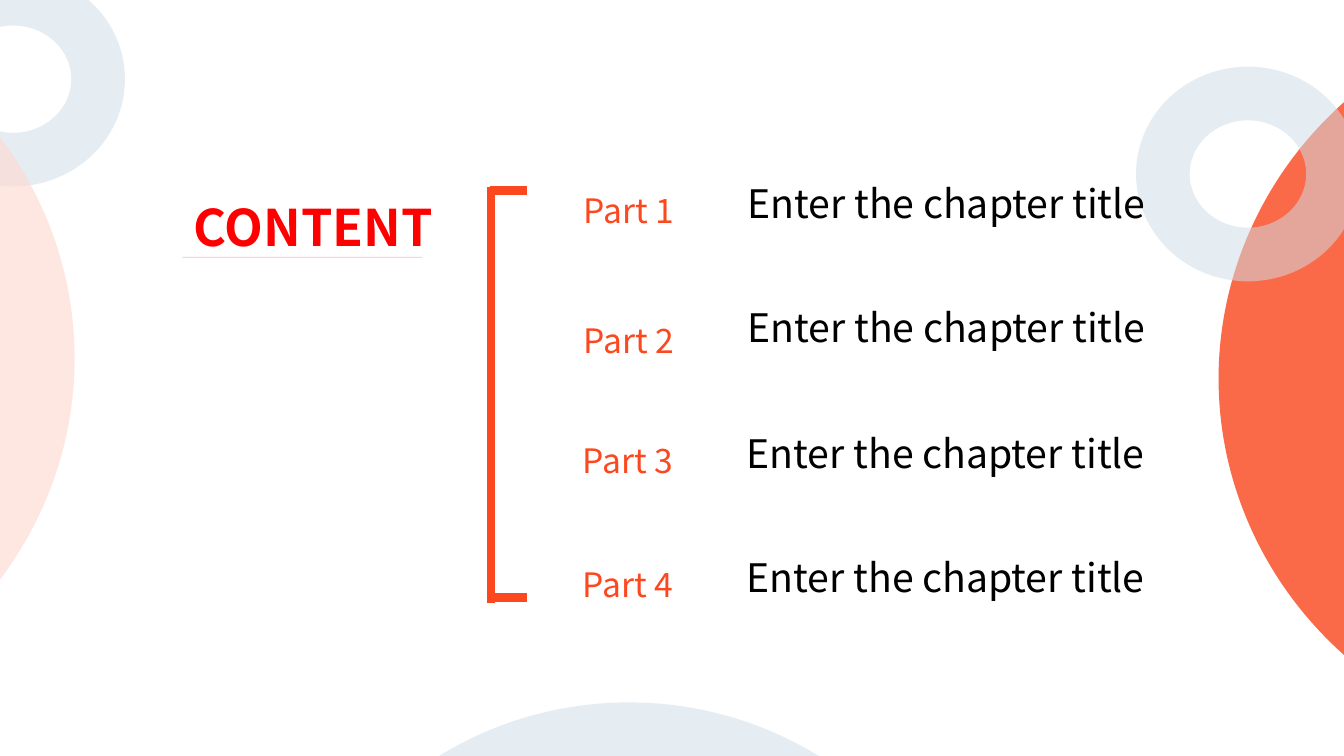
import pptx
import pptx.util
import pptx.dml.color
import pptx.enum.shapes
import pptx.enum.text
import pptx.oxml
import pptx.oxml.ns

Cm = pptx.util.Cm
Pt = pptx.util.Pt
RGBColor = pptx.dml.color.RGBColor
ALIGN = pptx.enum.text.PP_ALIGN

ORANGE = RGBColor(0xFB, 0x48, 0x1E)
PINK = RGBColor(0xFE, 0xDA, 0xD2)
MIST = RGBColor(0xCF, 0xDE, 0xE8)
RED = RGBColor(0xFF, 0x00, 0x00)
BLACK = RGBColor(0x00, 0x00, 0x00)

FACE = "Noto Sans CJK SC"
HEAD = {"font": {"name": FACE, "size": Pt(36), "bold": True}, "color": RED,
        "para": {"alignment": ALIGN.CENTER}}
PART = {"font": {"name": FACE, "size": Pt(24)}, "color": ORANGE,
        "para": {"alignment": ALIGN.CENTER, "line_spacing": 1.5}}
TITLE = {"font": {"name": FACE, "size": Pt(28)}, "color": BLACK,
         "para": {"alignment": ALIGN.LEFT}}
FRAME = {"word_wrap": True,
         "auto_size": pptx.enum.text.MSO_AUTO_SIZE.SHAPE_TO_FIT_TEXT,
         "vertical_anchor": pptx.enum.text.MSO_ANCHOR.MIDDLE}

BIG = (19.81, 19.02)
SMALL = (5.64, 5.41)
RINGS = [
    (7.01, 17.7, 17.68, 16.97, MIST, 52),
    (-2.49, -0.71, *SMALL, MIST, 52),
    (-17.93, -0.48, *BIG, PINK, 65),
    (30.71, 0.03, *BIG, ORANGE, 81),
    (28.63, 1.68, *SMALL, MIST, 52),
]
ROWS = [(0.02, 0, 0.17), (0.02, 3.27, 3.3), (0, 6.3, 6.47), (0, 9.42, 9.6)]


def put(item, values):
    for name, value in values.items():
        setattr(item, name, value)


def fade(shape, share):
    tint = shape._element.spPr.xpath(".//a:srgbClr")[0]
    alpha = pptx.oxml.parse_xml(
        f'<a:alpha {pptx.oxml.ns.nsdecls("a")} val="{share * 1000}"/>')
    tint.append(alpha)


def add_ring(slide, left, top, width, height, color, share):
    ring = slide.shapes.add_shape(
        pptx.enum.shapes.MSO_SHAPE.DONUT,
        Cm(left), Cm(top), Cm(width), Cm(height))
    ring.shadow.inherit = False
    ring.fill.solid()
    ring.fill.fore_color.rgb = color
    ring.line.fill.background()
    fade(ring, share)


def add_line(shapes, x1, y1, x2, y2, width):
    line = shapes.add_connector(
        pptx.enum.shapes.MSO_CONNECTOR.STRAIGHT,
        Cm(x1), Cm(y1), Cm(x2), Cm(y2))
    line.line.color.rgb = ORANGE
    line.line.width = Pt(width)
    line._element.spPr.append(pptx.oxml.parse_xml(
        f'<a:effectLst {pptx.oxml.ns.nsdecls("a")}/>'))
    return line


def add_text(slide, left, top, width, height, text, style):
    box = slide.shapes.add_textbox(Cm(left), Cm(top), Cm(width), Cm(height))
    put(box.text_frame, FRAME)
    para = box.text_frame.paragraphs[0]
    put(para, style["para"])
    run = para.add_run()
    run.text = text
    put(run.font, style["font"])
    run.font.color.rgb = style["color"]


def add_head(slide, left, top, width, height):
    rule = add_line(slide.shapes, left + 0.31, top + 1.68,
                    left + 6.35, top + 1.68, 0.5)
    fade(rule, 35)
    add_text(slide, left, top, width, height, "CONTENT", HEAD)


def add_parts(slide, left, top):
    for count, (shift, down, drop) in enumerate(ROWS, 1):
        add_text(slide, left + 4.9 + shift, top + drop, 10.87, 1.45,
                 "Enter the chapter title", TITLE)
        add_text(slide, left + shift, top + down, 4.32, 1.63,
                 f"Part {count}", PART)


def add_brace(slide, left, top, width, height):
    group = slide.shapes.add_group_shape()
    for y in (top + 0.1, top + height - 0.13):
        add_line(group.shapes, left, y, left + width, y, 6)
    add_line(group.shapes, left + 0.03, top, left + 0.03, top + height, 6)


def main():
    deck = pptx.Presentation()
    put(deck, {"slide_width": Cm(33.87), "slide_height": Cm(19.05)})
    slide = deck.slides.add_slide(deck.slide_layouts[6])
    for ring in RINGS:
        add_ring(slide, *ring)
    add_head(slide, 4.29, 4.8, 7.21, 1.8)
    add_parts(slide, 13.67, 4.22)
    add_brace(slide, 12.34, 4.7, 0.94, 10.49)
    deck.save("out.pptx")


if __name__ == "__main__":
    main()
